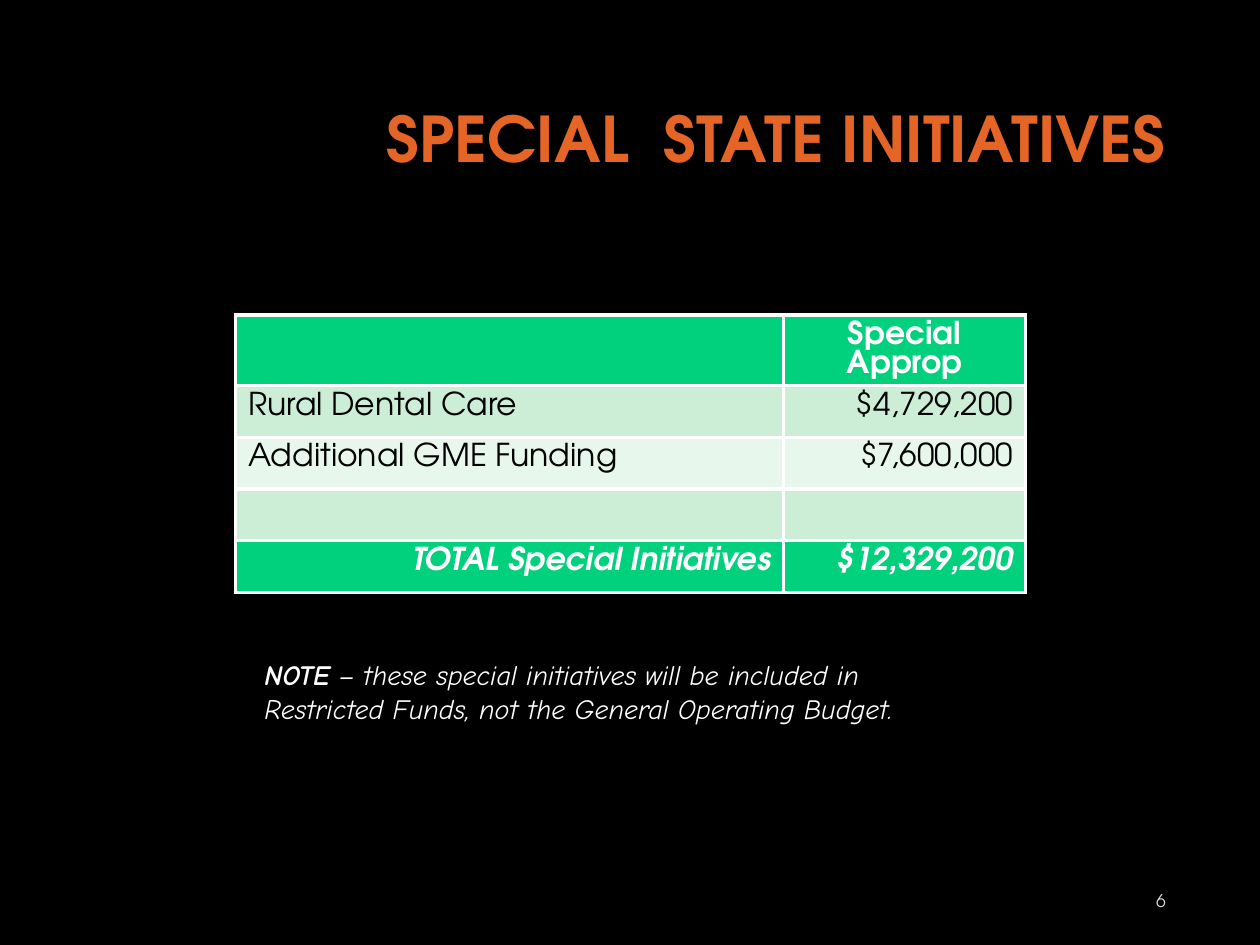
"""Build the slide on special state initiatives."""
from lxml import etree
from pptx import Presentation
from pptx.dml.color import RGBColor
from pptx.enum.text import MSO_ANCHOR, PP_ALIGN
from pptx.oxml.ns import qn
from pptx.util import Inches, Pt

LEFT, MID, RIGHT = PP_ALIGN.LEFT, PP_ALIGN.CENTER, PP_ALIGN.RIGHT
TOP, CENTER = MSO_ANCHOR.TOP, MSO_ANCHOR.MIDDLE
SANS, HAND = "TeX Gyre Adventor", "Comic Neue"
HEX = {
    "black": "000000", "white": "FFFFFF", "orange": "E56526", "gray": "DADADA",
    "green": "01D17D", "mint": "CCEED7", "pale": "E7F7EC",
}


def write(frame, text, size=18, font=SANS, color="white", bold=False,
          italic=False, align=LEFT, anchor=TOP, space=None):
    frame.word_wrap = True
    frame.vertical_anchor = anchor
    para = frame.paragraphs[0]
    para.alignment = align
    if space:
        para.line_spacing = space
    run = para.add_run()
    run.text = text
    run.font.size = Pt(size)
    run.font.name = font
    run.font.bold = bold
    run.font.italic = italic
    run.font.color.rgb = RGBColor.from_string(HEX[color])


def style(cell, color):
    props = cell._tc.get_or_add_tcPr()
    for side in ("a:lnL", "a:lnR", "a:lnT", "a:lnB"):
        line = etree.SubElement(props, qn(side), w=str(Pt(2.25)))
        fill = etree.SubElement(line, qn("a:solidFill"))
        etree.SubElement(fill, qn("a:srgbClr"), val=HEX["white"])
    cell.fill.solid()
    cell.fill.fore_color.rgb = RGBColor.from_string(HEX[color])


deck = Presentation()
deck.slide_width, deck.slide_height = Inches(10), Inches(7.5)
slide = deck.slides.add_slide(deck.slide_layouts[5])
slide.background.fill.solid()
slide.background.fill.fore_color.rgb = RGBColor.from_string(HEX["black"])

title = slide.shapes.title
title.left, title.top = Inches(2.38), Inches(0.42)
title.width, title.height = Inches(6.97), Inches(1.41)
write(title.text_frame, "SPECIAL  STATE INITIATIVES", size=36, color="orange",
      bold=True, align=RIGHT, anchor=CENTER, space=0.9)

head = {"color": "white", "bold": True}
body = {"color": "black"}
total = {"color": "white", "bold": True, "italic": True}
rows = [
    ("", "Special Approp", "green", head, LEFT, MID),
    ("Rural Dental Care", "$4,729,200", "mint", body, LEFT, RIGHT),
    ("Additional GME Funding", "$7,600,000", "pale", body, LEFT, RIGHT),
    ("", "", "mint", body, LEFT, RIGHT),
    ("TOTAL Special Initiatives", "$12,329,200", "green", total, RIGHT, RIGHT),
]
table = slide.shapes.add_table(len(rows), 2, Inches(1.87), Inches(2.5),
                               Inches(6.27), Inches(2.19)).table
table.columns[0].width, table.columns[1].width = Inches(4.35), Inches(1.92)
for r, (name, cost, fill, form, *sides) in enumerate(rows):
    table.rows[r].height = Inches(0.41 if r else 0.55)
    for c, text in enumerate((name, cost)):
        cell = table.cell(r, c)
        style(cell, fill)
        if text:
            write(cell.text_frame, text, align=sides[c], space=Pt(16.6), **form)

page = slide.shapes.add_textbox(Inches(7.19), Inches(6.95), Inches(2.16), Inches(0.4))
write(page.text_frame, "6", size=10, color="gray", align=RIGHT, anchor=CENTER)

note = slide.shapes.add_textbox(Inches(2), Inches(5.17), Inches(5.83), Inches(0.64))
write(note.text_frame, "NOTE", size=16, font=HAND, bold=True, italic=True)
write(note.text_frame, " – these special initiatives will be included in "
      "Restricted Funds, not the General Operating Budget.",
      size=16, font=HAND, italic=True)

deck.save("out.pptx")
